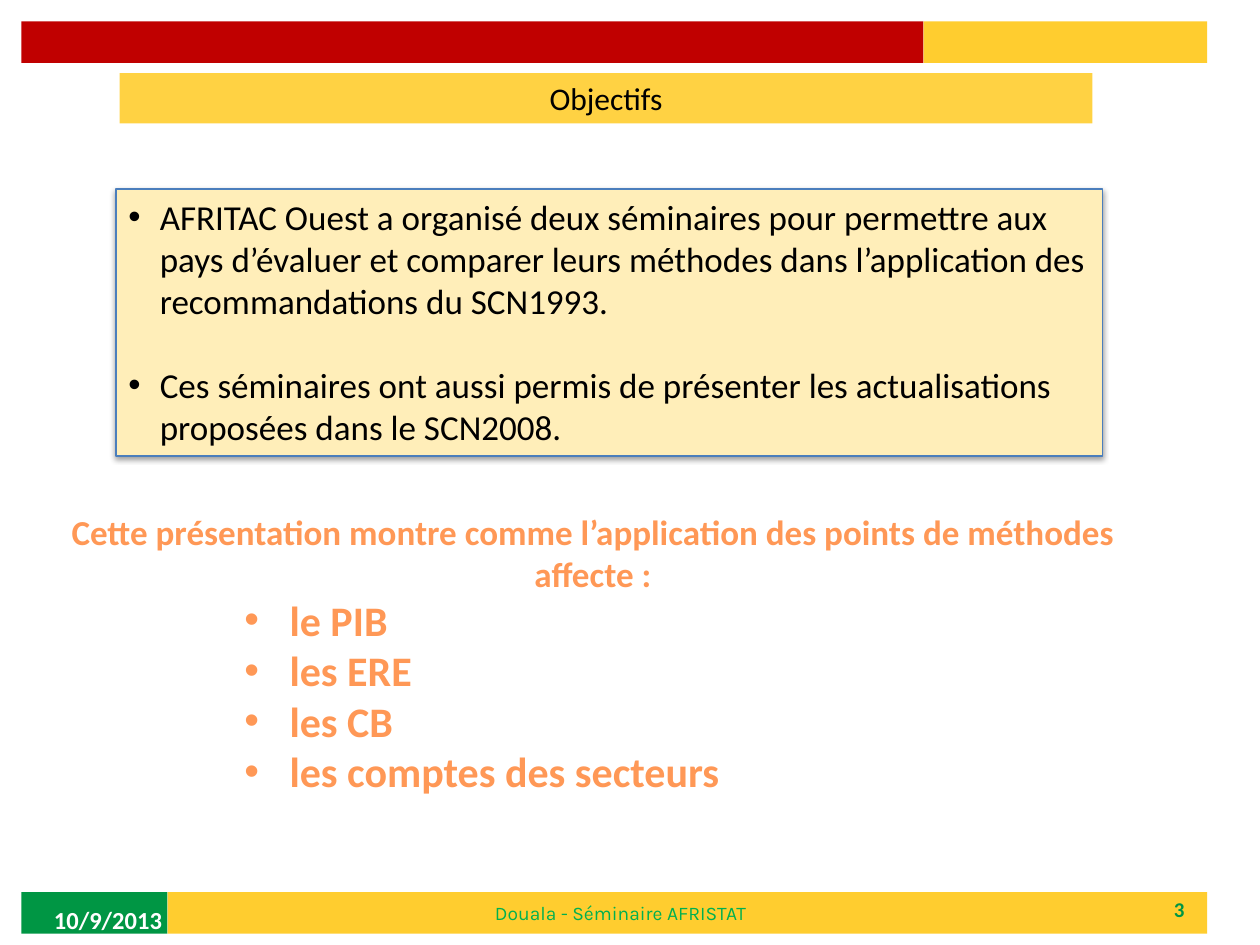
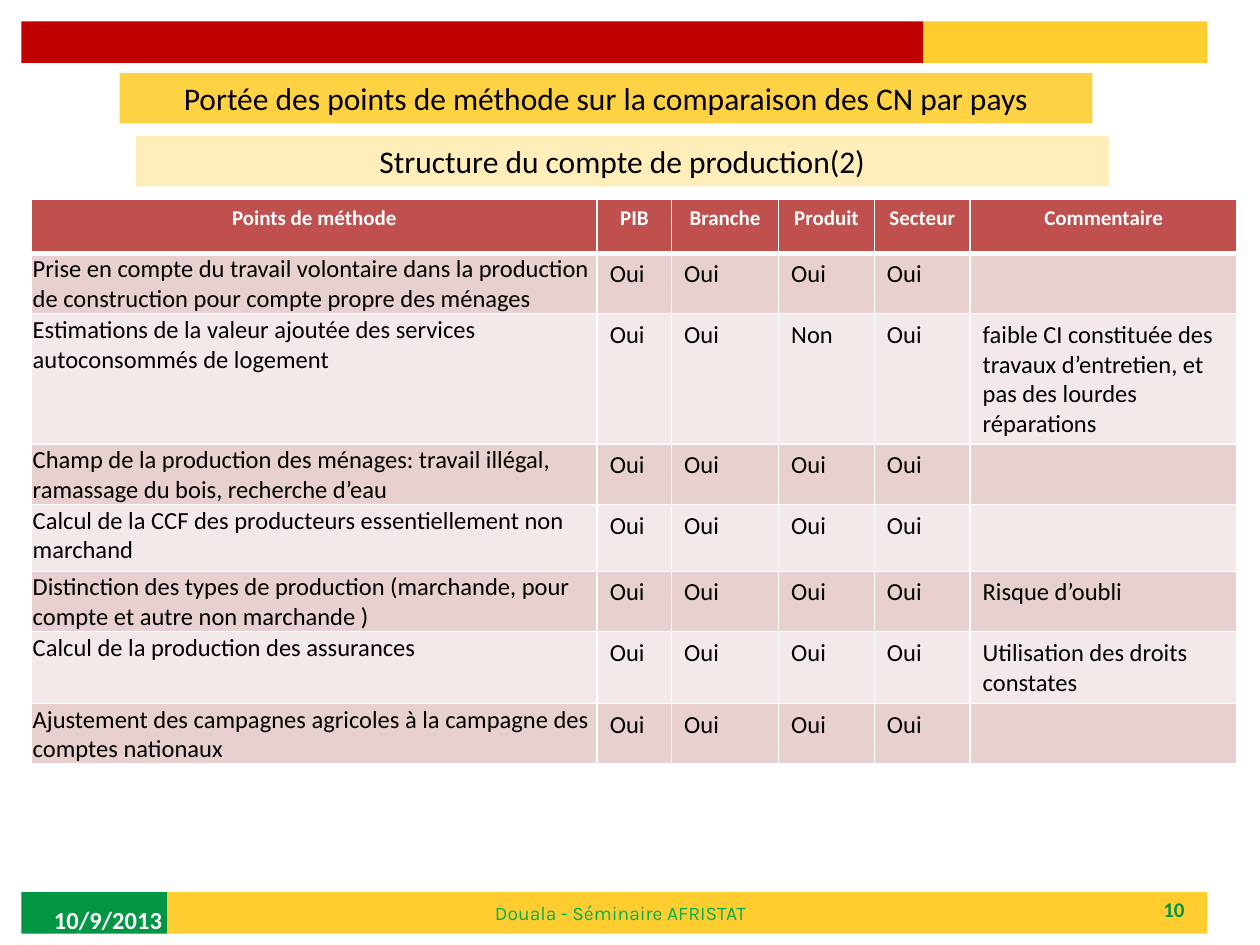
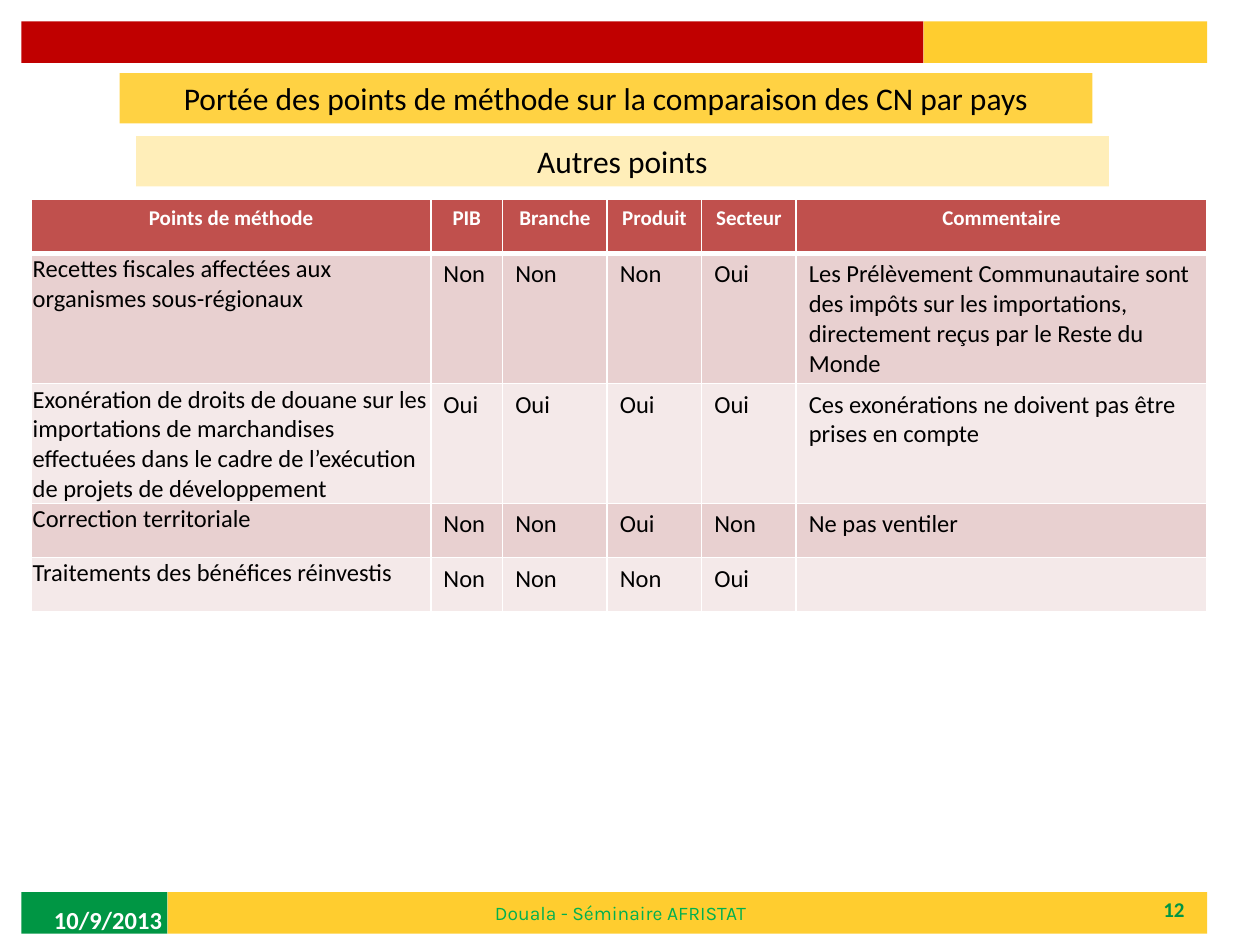
from pptx import Presentation
from pptx.dml.color import RGBColor as Rgb
from pptx.enum.shapes import MSO_SHAPE as Shape
from pptx.enum.text import MSO_ANCHOR as Anchor, MSO_AUTO_SIZE as Auto, PP_ALIGN as Align
from pptx.oxml.ns import qn
from pptx.util import Inches as In, Pt
from lxml.etree import SubElement as Sub

HUES = {
    "red": "C00000", "gold": "FFCD2F", "green": "009644", "leaf": "00B050",
    "title": "FFD243", "cream": "FFEEB9", "blue": "4B7EBC", "orange": "FF9856",
    "head": "C0504D", "odd": "E8D0D0", "even": "F4E9E9",
    "white": "FFFFFF", "black": "000000",
}
WIDE, TALL = 10, 7.5
EDGE, BAND, END = 0.17, 0.33, 9.58
TOP, FOOT = EDGE, TALL - EDGE - BAND + 0.08
BANDS = [
    ("green", EDGE, 1.33, FOOT), ("gold", 1.33, END, FOOT),
    ("red", EDGE, 7.33, TOP), ("gold", 7.33, END, TOP),
]
DATE, EVENT = "10/9/2013", "Douala - Séminaire AFRISTAT"

GOALS = [
    "AFRITAC Ouest a organisé deux séminaires pour permettre aux pays d’évaluer et comparer leurs méthodes dans l’application des recommandations du SCN1993.",
    "Ces séminaires ont aussi permis de présenter les actualisations proposées dans le SCN2008.",
]
LEAD = "Cette présentation montre comme l’application des points de méthodes affecte :"
PARTS = ["le PIB", "les ERE", "les CB", "les comptes des secteurs"]

SCOPE = "Portée des points de méthode sur la comparaison des CN par pays"
HEADS = ["Points de méthode", "PIB", "Branche", "Produit", "Secteur", "Commentaire"]
YES = ["Oui"] * 4
GRIDS = [
    {
        "page": 10,
        "sub": "Structure du compte de production(2)",
        "cols": [4.49, 0.59, 0.85, 0.76, 0.76, 2.12],
        "tall": [0.43, 0.48, 1.03, 0.48, 0.53, 0.48, 0.57, 0.48],
        "rows": [
            ["Prise en compte du travail volontaire dans la production de construction pour compte propre des ménages", *YES, ""],
            ["Estimations de la valeur ajoutée des services autoconsommés de logement", "Oui", "Oui", "Non", "Oui",
             "faible CI constituée des travaux d’entretien, et pas des lourdes réparations"],
            ["Champ de la production des ménages: travail illégal, ramassage du bois, recherche d’eau", *YES, ""],
            ["Calcul de la CCF des producteurs essentiellement non marchand", *YES, ""],
            ["Distinction des types de production (marchande, pour compte et autre non marchande )", *YES, "Risque d’oubli"],
            ["Calcul de la production des assurances", *YES, "Utilisation des droits constates"],
            ["Ajustement des campagnes agricoles à la campagne des comptes nationaux", *YES, ""],
        ],
    },
    {
        "page": 12,
        "sub": "Autres points",
        "cols": [3.17, 0.57, 0.83, 0.75, 0.75, 3.26],
        "tall": [0.43, 1.03, 0.95, 0.43, 0.43],
        "rows": [
            ["Recettes fiscales affectées aux organismes sous-régionaux", "Non", "Non", "Non", "Oui",
             "Les Prélèvement Communautaire sont des impôts sur les importations, directement reçus par le Reste du Monde"],
            ["Exonération de droits de douane sur les importations de marchandises effectuées dans le cadre de l’exécution de projets de développement",
             *YES, "Ces exonérations ne doivent pas être prises en compte"],
            ["Correction territoriale", "Non", "Non", "Oui", "Non", "Ne pas ventiler"],
            ["Traitements des bénéfices réinvestis", "Non", "Non", "Non", "Oui", ""],
        ],
    },
]


def hue(name):
    return Rgb.from_string(HUES[name])


def paint(part, name):
    part.fill.solid()
    part.fill.fore_color.rgb = hue(name)


def write(frame, text, size, color="black", bold=False, align=Align.LEFT,
          font="Calibri", dot=None, gap=0):
    para = frame.paragraphs[0]
    if para.runs:
        para = frame.add_paragraph()
    para.alignment = align
    if gap:
        para.space_before = Pt(gap)
    if dot:
        props = para._p.get_or_add_pPr()
        left, hang = dot
        props.set("marL", str(In(left)))
        props.set("indent", str(-In(hang)))
        Sub(props, qn("a:buFont"), typeface="Arial")
        Sub(props, qn("a:buChar"), char="•")
    run = para.add_run()
    run.text = text
    face = run.font
    face.name, face.size, face.bold = font, Pt(size), bold
    face.color.rgb = hue(color)


def block(slide, color, x, y, w, h):
    box = slide.shapes.add_shape(Shape.RECTANGLE, In(x), In(y), In(w), In(h))
    box.shadow.inherit = False
    paint(box, color)
    box.line.fill.background()
    box.text_frame.vertical_anchor = Anchor.TOP
    return box


def label(slide, x, y, w, h, anchor=Anchor.TOP, wrap=True):
    frame = slide.shapes.add_textbox(In(x), In(y), In(w), In(h)).text_frame
    frame.word_wrap = wrap
    frame.vertical_anchor = anchor
    return frame


def start(deck, title, page):
    slide = deck.slides.add_slide(deck.slide_layouts[5])
    for color, left, right, y in BANDS:
        block(slide, color, left, y, right - left, BAND)
    write(label(slide, 7.17, FOOT, 2.33, 0.27, Anchor.MIDDLE), str(page), 12, "green", True, Align.RIGHT)
    write(label(slide, 0.33, 7.1, 2.33, 0.4, Anchor.MIDDLE), DATE, 14, "white", True)
    write(label(slide, 3.83, 7.1, 2.23, 0.29, wrap=False), EVENT, 11, "leaf", font="Karla")
    head = slide.shapes.title
    head.left, head.top, head.width, head.height = In(0.95), In(0.58), In(7.72), In(0.4)
    paint(head, "title")
    frame = head.text_frame
    frame.auto_size = Auto.NONE
    frame.vertical_anchor = Anchor.TOP
    write(frame, title, 18, align=Align.CENTER)
    return slide


def shade(box):
    list_ = box._element.spPr.find(qn("a:effectLst"))
    drop = Sub(list_, qn("a:outerShdw"), blurRad=str(Pt(3.1)), dist=str(Pt(1.6)),
               dir="5400000", rotWithShape="0")
    tone = Sub(drop, qn("a:srgbClr"), val=HUES["black"])
    Sub(tone, qn("a:alpha"), val="38000")


def rule(cell, row):
    props = cell._tc.get_or_add_tcPr()
    thick = {"lnT": 3 if row == 1 else 1, "lnB": 3 if row == 0 else 1}
    for side in ("lnL", "lnR", "lnT", "lnB"):
        line = Sub(props, qn("a:" + side), w=str(Pt(thick.get(side, 1))))
        Sub(Sub(line, qn("a:solidFill")), qn("a:srgbClr"), val=HUES["white"])


def fill(cell, text, row, col):
    rule(cell, row)
    paint(cell, "head" if row == 0 else "odd" if row % 2 else "even")
    if row and col == 0:
        cell.margin_left = cell.margin_top = cell.margin_right = In(0.01)
        cell.margin_bottom = 0
    if not text:
        cell.text_frame.paragraphs[0].font.size = Pt(14)
    elif row == 0:
        write(cell.text_frame, text, 12, "white", True, Align.CENTER)
    else:
        write(cell.text_frame, text, 14)


def goals(deck):
    slide = start(deck, "Objectifs", 3)
    frame = label(slide, 0.33, 4, 8.75, 2.39)
    write(frame, LEAD, 20, "orange", True, Align.CENTER)
    for part in PARTS:
        write(frame, part, 24, "orange", True, dot=(1.87, 0.36))
    box = block(slide, "cream", 0.92, 1.5, 7.83, 2.12)
    box.line.color.rgb = hue("blue")
    box.line.width = Pt(0.75)
    shade(box)
    for i, goal in enumerate(GOALS):
        write(box.text_frame, goal, 20, dot=(0.25, 0.25), gap=24 * i)


def grid(deck, data):
    slide = start(deck, SCOPE, data["page"])
    cols, tall = data["cols"], data["tall"]
    table = slide.shapes.add_table(len(tall), len(cols), In(0.25), In(1.58),
                                   In(sum(cols)), In(sum(tall))).table
    for col, w in zip(table.columns, cols):
        col.width = In(w)
    for row, h in zip(table.rows, tall):
        row.height = In(h)
    for r, texts in enumerate([HEADS] + data["rows"]):
        for c, text in enumerate(texts):
            fill(table.cell(r, c), text, r, c)
    box = block(slide, "cream", 1.08, 1.08, 7.72, 0.4)
    write(box.text_frame, data["sub"], 18, align=Align.CENTER)


def main():
    deck = Presentation()
    deck.slide_width, deck.slide_height = In(WIDE), In(TALL)
    goals(deck)
    for data in GRIDS:
        grid(deck, data)
    deck.save("out.pptx")


if __name__ == "__main__":
    main()
